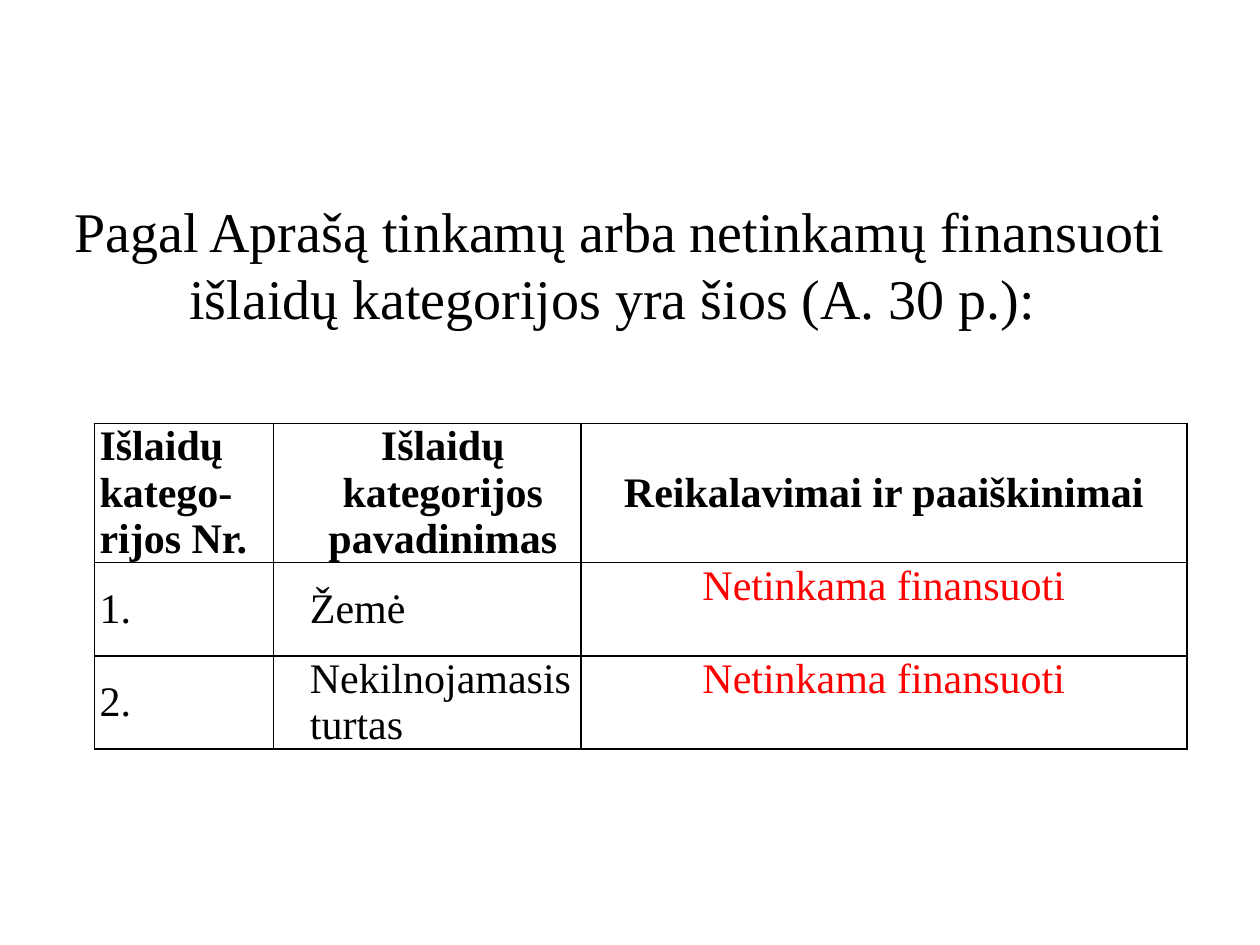
from dataclasses import dataclass

from lxml.etree import SubElement
from pptx import Presentation
from pptx.dml.color import RGBColor
from pptx.enum.text import MSO_ANCHOR as Anchor, MSO_AUTO_SIZE as AutoSize, PP_ALIGN as Align
from pptx.oxml.ns import qn
from pptx.util import Inches, Pt

COLORS = {"text": "000000", "warning": "FF0000", "paper": "FFFFFF", "border": "000000"}
FONT = "Times New Roman"
COLUMN_WIDTHS = (1.42, 2.44, 4.81)
ROW_HEIGHTS = (1.1, 0.74, 0.74)


@dataclass
class Entry:
    text: str
    align: Align = Align.LEFT
    indent: float = 0
    bold: bool = False
    color: str = "text"
    anchor: Anchor = Anchor.MIDDLE


def heading(text: str, align: Align = Align.CENTER, indent: float = 0) -> Entry:
    return Entry(text, align, indent, bold=True)


def expense(number: str, category: str) -> list[Entry]:
    return [
        Entry(number),
        Entry(category, Align.JUSTIFY, 0.25),
        Entry("Netinkama finansuoti", Align.CENTER, color="warning", anchor=Anchor.TOP),
    ]


def format_text(paragraph, size: float, color: str, bold: bool = False) -> None:
    for run in paragraph.runs:
        run.font.name = FONT
        run.font.size = Pt(size)
        run.font.bold = bold
        run.font.color.rgb = RGBColor.from_string(COLORS[color])


def draw_borders(cell) -> None:
    properties = cell._tc.get_or_add_tcPr()
    for side in ("a:lnL", "a:lnR", "a:lnT", "a:lnB"):
        line = SubElement(properties, qn(side), w=str(Pt(1)))
        fill = SubElement(line, qn("a:solidFill"))
        SubElement(fill, qn("a:srgbClr"), val=COLORS["border"])


def fill_cell(cell, entry: Entry) -> None:
    draw_borders(cell)
    cell.fill.solid()
    cell.fill.fore_color.rgb = RGBColor.from_string(COLORS["paper"])
    cell.margin_left = cell.margin_right = Inches(0.04)
    cell.margin_top = cell.margin_bottom = 0
    cell.vertical_anchor = entry.anchor
    paragraph = cell.text_frame.paragraphs[0]
    paragraph.text = entry.text
    paragraph.alignment = entry.align
    if entry.indent:
        paragraph._p.get_or_add_pPr().set("marL", str(Inches(entry.indent)))
    format_text(paragraph, 24, entry.color, entry.bold)


def add_title(slide, text: str) -> None:
    title = slide.shapes.title
    title.left, title.top = Inches(0.42), Inches(1.47)
    title.width, title.height = Inches(9), Inches(1.25)
    frame = title.text_frame
    frame.text = text
    frame.word_wrap = True
    frame.auto_size = AutoSize.NONE
    frame.vertical_anchor = Anchor.MIDDLE
    frame.paragraphs[0].alignment = Align.CENTER
    format_text(frame.paragraphs[0], 32, "text")


def add_expense_table(slide, rows: list[list[Entry]]) -> None:
    table = slide.shapes.add_table(
        len(rows), len(COLUMN_WIDTHS), Inches(0.75), Inches(3.36),
        Inches(sum(COLUMN_WIDTHS)), Inches(sum(ROW_HEIGHTS)),
    ).table
    for column, width in zip(table.columns, COLUMN_WIDTHS):
        column.width = Inches(width)
    for row, height, entries in zip(table.rows, ROW_HEIGHTS, rows):
        row.height = Inches(height)
        for cell, entry in zip(row.cells, entries):
            fill_cell(cell, entry)


def main() -> None:
    deck = Presentation()
    deck.slide_width, deck.slide_height = Inches(10), Inches(7.5)
    slide = deck.slides.add_slide(deck.slide_layouts[5])
    add_title(
        slide,
        "Pagal Aprašą tinkamų arba netinkamų finansuoti išlaidų kategorijos yra šios (A. 30 p.): ",
    )
    add_expense_table(slide, [
        [
            heading("Išlaidų katego-rijos Nr.", Align.LEFT),
            heading("Išlaidų kategorijos pavadinimas", indent=0.25),
            heading("Reikalavimai ir paaiškinimai"),
        ],
        expense("1.", "Žemė"),
        expense("2.", "Nekilnojamasis turtas"),
    ])
    deck.save("out.pptx")


if __name__ == "__main__":
    main()
